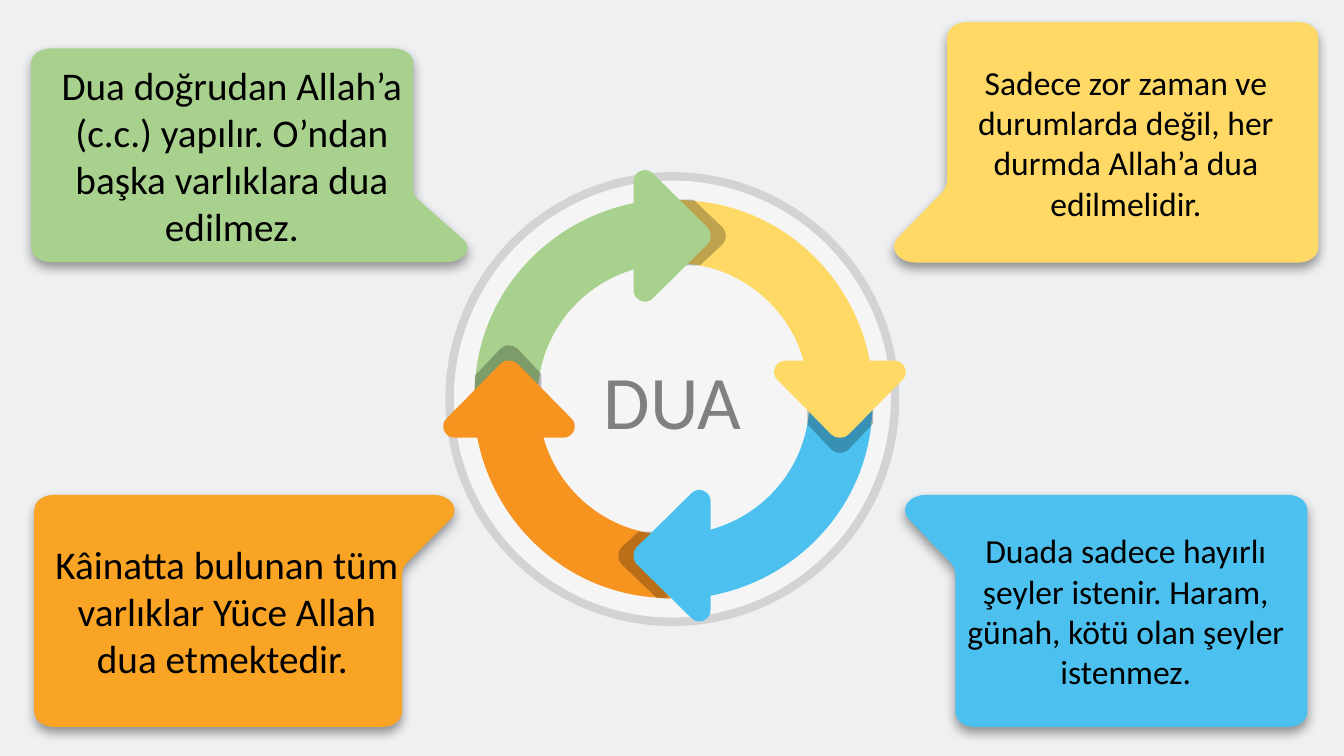
from dataclasses import dataclass

from lxml import etree
from pptx import Presentation
from pptx.dml.color import RGBColor
from pptx.enum.shapes import MSO_SHAPE
from pptx.enum.text import MSO_ANCHOR, PP_ALIGN
from pptx.oxml.ns import qn
from pptx.util import Inches, Pt

ELLIPSE, RECTANGLE = MSO_SHAPE.OVAL, MSO_SHAPE.RECTANGLE
MIDDLE = MSO_ANCHOR.MIDDLE
CENTER = PP_ALIGN.CENTER

HEIGHT = Inches(7.5)
WIDTH = HEIGHT * 16 // 9
CELL = HEIGHT / 100  # square grid, 100 rows high


@dataclass(frozen=True)
class Theme:
    font: str = "Calibri"
    ground: str = "EEF0F2"
    disc: str = "F5F5F5"
    rim: str = "D3D3D3"
    black: str = "000000"
    grey: str = "808080"
    green: str = "A9D18E"
    yellow: str = "FFD966"
    blue: str = "4CC1EF"
    orange: str = "F7931F"
    amber: str = "FAA426"
    title: int = 54
    large: int = 28
    small: int = 24


THEME = Theme()

# Outlines: a part of one point is a corner, a part of three is a Bézier curve.
# Speech bubble in percent of its box, tail at bottom right
BUBBLE = [
    [(95, 100)], [(4.6, 100)], [(2, 100), (0, 97), (0, 93.5)],
    [(0, 6.5)], [(0, 3), (2, 0), (4.6, 0)],
    [(83, 0)], [(85.5, 0), (87.5, 3), (87.5, 6.5)],
    [(87.5, 66.5)], [(87.5, 68), (88, 69), (88.5, 70.5)],
    [(99, 89.5)], [(101.5, 94), (99, 100), (95, 100)],
]
# Top right quarter of the ring, in cells from its centre
QUARTER = [
    [(0.4, -26.4)], [(2.9, -26.2)], [(15.2, -25.1), (25, -15.2), (26.3, -2.8)],
    [(26.3, -0.5)], [(17.9, -0.5)], [(17.8, -1.9)],
    [(17, -10.4), (10.3, -17.1), (1.9, -17.9)], [(0.4, -18)],
]
# Arrowhead pointing up, in cells from its centre
ARROW = [
    [(0, -5.1)], [(0.4, -5.1), (0.8, -5), (1.1, -4.7)],
    [(8.3, 2.6)], [(9.2, 3.5), (8.5, 5.1), (7.2, 5.1)],
    [(-7.2, 5.1)], [(-8.5, 5.1), (-9.2, 3.5), (-8.3, 2.6)],
    [(-1.1, -4.7)], [(-0.8, -5), (-0.4, -5.1), (0, -5.1)],
]
RING_CENTRE = (89.1, 52.8)

# Left, top, width, height, mirrored across, mirrored down, colour, size, text
BUBBLES = [
    (118.27, 2.93, 56.13, 31.8, True, False, THEME.yellow, THEME.small,
     ["Sadece zor zaman ve durumlarda değil, her durmda Allah’a dua edilmelidir."]),
    (119.73, 65.47, 53.2, 30.67, True, True, THEME.blue, THEME.small,
     ["Duada sadece hayırlı şeyler istenir. Haram, günah, kötü olan şeyler istenmez."]),
    (4.13, 6.4, 57.73, 28.27, False, False, THEME.green, THEME.large,
     ["Dua doğrudan Allah’a (c.c.) yapılır. O’ndan", "başka varlıklara dua edilmez."]),
    (4.53, 65.47, 55.6, 30.67, False, True, THEME.amber, THEME.large,
     ["Kâinatta bulunan tüm varlıklar Yüce Allah dua etmektedir. "]),
]
# Colour and clockwise quarter turns
QUARTERS = [(THEME.yellow, 0), (THEME.green, 3), (THEME.orange, 2), (THEME.blue, 1)]
# Colour, quarter turns, centre, left and right edge of its shade
ARROWS = [
    (THEME.orange, 0, (67.33, 52.8), -4.5, 4.3),
    (THEME.green, 1, (88.9, 31.2), -4.8, 3.9),
    (THEME.blue, 3, (88.9, 73.5), -5.6, 3.2),
    (THEME.yellow, 2, (111.1, 52.8), -4.4, 4.3),
]


def color(value):
    return RGBColor.from_string(value)


def set_all(target, formats):
    for name, value in formats.items():
        setattr(target, name, value)


def turn(point, turns):
    x, y = point
    for _ in range(turns):
        x, y = -y, x
    return x, y


def reshape(outline, rule):
    return [[rule(*point) for point in part] for part in outline]


def move(outline, centre):
    return reshape(outline, lambda x, y: (x + centre[0], y + centre[1]))


def flatten(outline, steps=20):
    """Points along the outline, which give its true extent."""
    points = []
    for part in outline:
        if len(part) == 1:
            points += part
            continue
        knots = [points[-1], *part]
        for step in range(1, steps + 1):
            t = step / steps
            weights = ((1 - t) ** 3, 3 * t * (1 - t) ** 2, 3 * t * t * (1 - t), t ** 3)
            points.append(tuple(sum(w * knot[axis] for w, knot in zip(weights, knots))
                                for axis in (0, 1)))
    return points


def paint(shape, fill):
    shape.shadow.inherit = False
    shape.fill.solid()
    shape.fill.fore_color.rgb = color(fill)
    shape.line.fill.background()


def add_outline(page, outline, fill):
    spots = [(round(x * CELL), round(y * CELL)) for x, y in flatten(outline)]
    builder = page.shapes.build_freeform(*spots[0], scale=1.0)
    builder.add_line_segments(spots[1:], close=True)
    shape = builder.convert_to_shape()
    # Draw the path with true curves
    track = shape._element.spPr.find(".//" + qn("a:path"))
    for step in list(track):
        track.remove(step)
    for index, part in enumerate(outline):
        kind = "a:cubicBezTo" if len(part) == 3 else "a:lnTo" if index else "a:moveTo"
        step = etree.SubElement(track, qn(kind))
        for x, y in part:
            etree.SubElement(step, qn("a:pt"), x=str(round(x * CELL) - shape.left),
                             y=str(round(y * CELL) - shape.top))
    etree.SubElement(track, qn("a:close"))
    paint(shape, fill)
    return shape


def add_turned(page, outline, turns, centre, fill):
    """Draw upright, then swing the shape around the centre."""
    shape = add_outline(page, move(outline, centre), fill)
    pivot_x, pivot_y = (cells * CELL for cells in centre)
    half_width, half_height = shape.width / 2, shape.height / 2
    x, y = turn((shape.left + half_width - pivot_x, shape.top + half_height - pivot_y), turns)
    set_all(shape, {"left": round(pivot_x + x - half_width),
                    "top": round(pivot_y + y - half_height), "rotation": 90 * turns})
    return shape


def write(shape, texts, size, ink, left=0.04, right=0.04):
    box = shape.text_frame
    set_all(box, {"word_wrap": True, "vertical_anchor": MIDDLE,
                  "margin_left": Inches(left), "margin_right": Inches(right),
                  "margin_top": Inches(0.04), "margin_bottom": Inches(0.04)})
    for index, text in enumerate(texts):
        para = box.add_paragraph() if index else box.paragraphs[0]
        para.alignment = CENTER
        span = para.add_run()
        span.text = text
        set_all(span.font, {"name": THEME.font, "size": Pt(size)})
        span.font.color.rgb = color(ink)


def add_alpha(parent, percent):
    etree.SubElement(parent, qn("a:alpha"), val=str(percent * 1000))


def drop_shadow(shape):
    effects = shape._element.spPr.find(qn("a:effectLst"))
    shadow = etree.SubElement(effects, qn("a:outerShdw"), blurRad=str(Pt(8)),
                              dist=str(Pt(4)), dir="5400000", algn="t", rotWithShape="0")
    add_alpha(etree.SubElement(shadow, qn("a:srgbClr"), val=THEME.black), 40)


def add_bubble(page, left, top, width, height, across, down, fill, size, texts):
    shape = add_outline(page, reshape(BUBBLE, lambda x, y: (
        left + width * (100 - x if across else x) / 100,
        top + height * (100 - y if down else y) / 100)), fill)
    drop_shadow(shape)
    margins = (0.51, 0.12) if across else (0.16, 0.51)
    write(shape, texts, size, THEME.black, *margins)


def add_disc(page):
    left, top, side = (round(cells * CELL) for cells in (59.47, 23.33, 58.93))
    disc = page.shapes.add_shape(ELLIPSE, left, top, side, side)
    paint(disc, THEME.disc)
    disc.line.color.rgb = color(THEME.rim)
    disc.line.width = Pt(6)
    write(disc, ["DUA"], THEME.title, THEME.grey)


def add_shade(page, turns, centre, left, right):
    """Dark chevron that lies ahead of an arrowhead, within the ring."""
    chevron = [[(0, -7.1)], [(0.4, -7.1), (0.8, -7), (1.1, -6.7)],
               [(right, right - 7.6)], [(right, -0.6)], [(left, -0.6)], [(left, -left - 7.6)],
               [(-1.1, -6.7)], [(-0.8, -7), (-0.4, -7.1), (0, -7.1)]]
    shape = add_turned(page, chevron, turns, centre, THEME.black)
    add_alpha(shape._element.spPr.find(qn("a:solidFill"))[0], 25)


def main():
    deck = Presentation()
    set_all(deck, {"slide_width": WIDTH, "slide_height": HEIGHT})
    page = deck.slides.add_slide(deck.slide_layouts[6])
    paint(page.shapes.add_shape(RECTANGLE, 0, 0, WIDTH, HEIGHT), THEME.ground)

    # Four statements
    for bubble in BUBBLES:
        add_bubble(page, *bubble)

    # Wheel: disc, ring, shades, arrowheads
    add_disc(page)
    for fill, turns in QUARTERS:
        ring_part = reshape(QUARTER, lambda x, y: turn((x, y), turns))
        add_outline(page, move(ring_part, RING_CENTRE), fill)
    for _, turns, centre, left, right in ARROWS:
        add_shade(page, turns, centre, left, right)
    for fill, turns, centre, _, _ in ARROWS:
        add_turned(page, ARROW, turns, centre, fill)

    deck.save("out.pptx")


if __name__ == "__main__":
    main()
